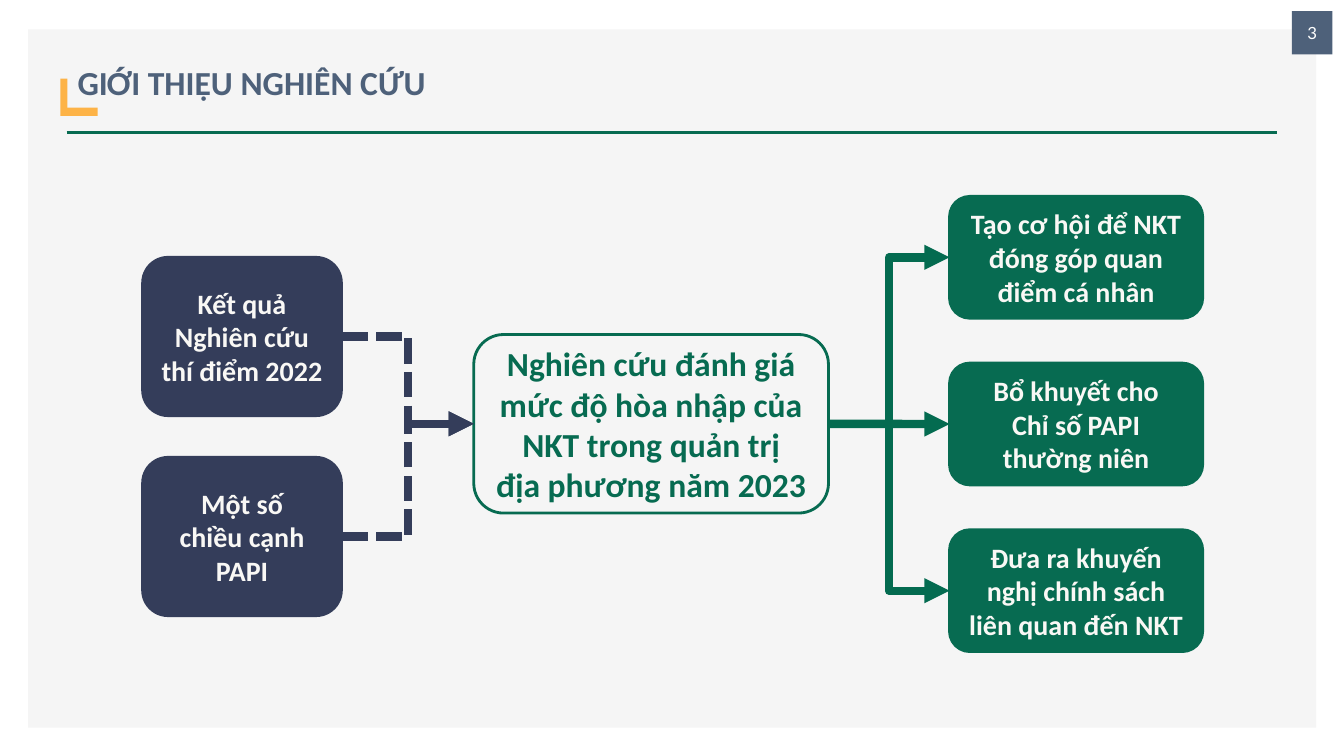
from lxml import etree
from pptx import Presentation
from pptx import util as u
from pptx.dml.color import RGBColor
from pptx.enum import dml, shapes, text
from pptx.oxml import ns

PANEL = RGBColor(0xF5, 0xF5, 0xF5)
SLATE = RGBColor(0x4E, 0x61, 0x7A)
ORANGE = RGBColor(0xFD, 0xB3, 0x47)
NAVY = RGBColor(0x34, 0x3D, 0x5A)
GREEN = RGBColor(0x07, 0x6B, 0x51)
ARROW_GREEN = RGBColor(0x04, 0x6B, 0x50)
CREAM = RGBColor(0xF9, 0xF8, 0xF5)
WHITE = RGBColor(0xFF, 0xFF, 0xFF)
RECT = shapes.MSO_SHAPE.RECTANGLE
ROUND = shapes.MSO_SHAPE.ROUNDED_RECTANGLE

prs = Presentation()
prs.slide_width, prs.slide_height = u.Cm(33.87), u.Cm(19.05)
s = prs.slides.add_slide(prs.slide_layouts[5])


def add_box(kind, pos, fill, line=None, words="", size=20, color=CREAM, font="Calibri", bold=True):
    sp = s.shapes.add_shape(kind, *[u.Cm(v) for v in pos])
    sp.shadow.inherit = False
    if fill is None:
        sp.fill.background()
    else:
        sp.fill.solid()
        sp.fill.fore_color.rgb = fill
    if line is None:
        sp.line.fill.background()
    else:
        sp.line.color.rgb = line
        sp.line.width = u.Pt(2)
    tf = sp.text_frame
    tf.word_wrap = True
    tf.vertical_anchor = text.MSO_ANCHOR.MIDDLE
    if words:
        tf.text = words
    for p in tf.paragraphs:
        p.alignment = text.PP_ALIGN.CENTER
        for r in p.runs:
            r.font.name, r.font.size, r.font.bold = font, u.Pt(size), bold
            r.font.color.rgb = color
    return sp


def add_line(kind, pos, color, width, dashed=False, arrow=True):
    cn = s.shapes.add_connector(kind, *[u.Cm(v) for v in pos])
    cn.line.color.rgb = color
    cn.line.width = u.Pt(width)
    if dashed:
        cn.line.dash_style = dml.MSO_LINE.SQUARE_DOT
    if arrow:
        etree.SubElement(cn.line._get_or_add_ln(), ns.qn("a:tailEnd"), type="triangle")
    etree.SubElement(cn._element.spPr, ns.qn("a:effectLst"))
    return cn


# Background panel, header rule, page number and corner accent
add_box(RECT, (0.71, 0.74, 32.46, 17.6), PANEL)
add_line(shapes.MSO_CONNECTOR.STRAIGHT, (1.68, 3.33, 32.18, 3.33), GREEN, 2, arrow=False)
add_box(RECT, (32.56, 0.28, 1.02, 1.09), SLATE, words="3", size=12, color=WHITE,
        font="Lato", bold=False)
add_box(RECT, (1.52, 1.98, 0.94, 0.94), ORANGE)

# Title, placed over the accent so that only its corner shows
title = s.shapes.title
title.left, title.top, title.width, title.height = [u.Cm(v) for v in (1.7, 0.91, 22.86, 1.8)]
title.fill.solid()
title.fill.fore_color.rgb = PANEL
tf = title.text_frame
tf.text = "GIỚI THIỆU NGHIÊN CỨU"
tf.auto_size = text.MSO_AUTO_SIZE.NONE
tf.vertical_anchor = text.MSO_ANCHOR.MIDDLE
p = tf.paragraphs[0]
p.alignment = text.PP_ALIGN.LEFT
p.line_spacing = 1.5
r = p.runs[0]
r.font.name, r.font.size, r.font.bold = "Calibri", u.Pt(24), True
r.font.color.rgb = SLATE
title.element.getparent().append(title.element)

# Central study
study = add_box(ROUND, (11.94, 8.43, 8.94, 4.5), None, GREEN,
                "Nghiên cứu đánh giá\vmức độ hòa nhập của\vNKT trong quản trị\vđịa phương năm 2023",
                24, GREEN)

# Inputs on the left, joined to the study by dashed arrows
inputs = ["Kết quả\nNghiên cứu\vthí điểm 2022", "Một số\vchiều cạnh\vPAPI"]
for i, words in enumerate(inputs):
    sp = add_box(ROUND, (3.56, 6.45 + 5.04 * i, 5.08, 4.06), NAVY, words=words)
    cn = add_line(shapes.MSO_CONNECTOR.ELBOW, (0, 0, 1, 1), NAVY, 6, dashed=True)
    cn.begin_connect(sp, 3)
    cn.end_connect(study, 1)

# Outcomes on the right
outcomes = ["Tạo cơ hội để NKT\vđóng góp quan\vđiểm cá nhân",
            "Bổ khuyết cho\vChỉ số PAPI\vthường niên",
            "Đưa ra khuyến\vnghị chính sách\vliên quan đến NKT"]
for i, words in enumerate(outcomes):
    sp = add_box(ROUND, (23.93, 4.95 + 4.2 * i, 6.38, 3.07), GREEN, GREEN, words)
    kind = shapes.MSO_CONNECTOR.STRAIGHT if i == 1 else shapes.MSO_CONNECTOR.ELBOW
    cn = add_line(kind, (0, 0, 1, 1), ARROW_GREEN, 6)
    cn.begin_connect(study, 3)
    cn.end_connect(sp, 1)

prs.save("out.pptx")
